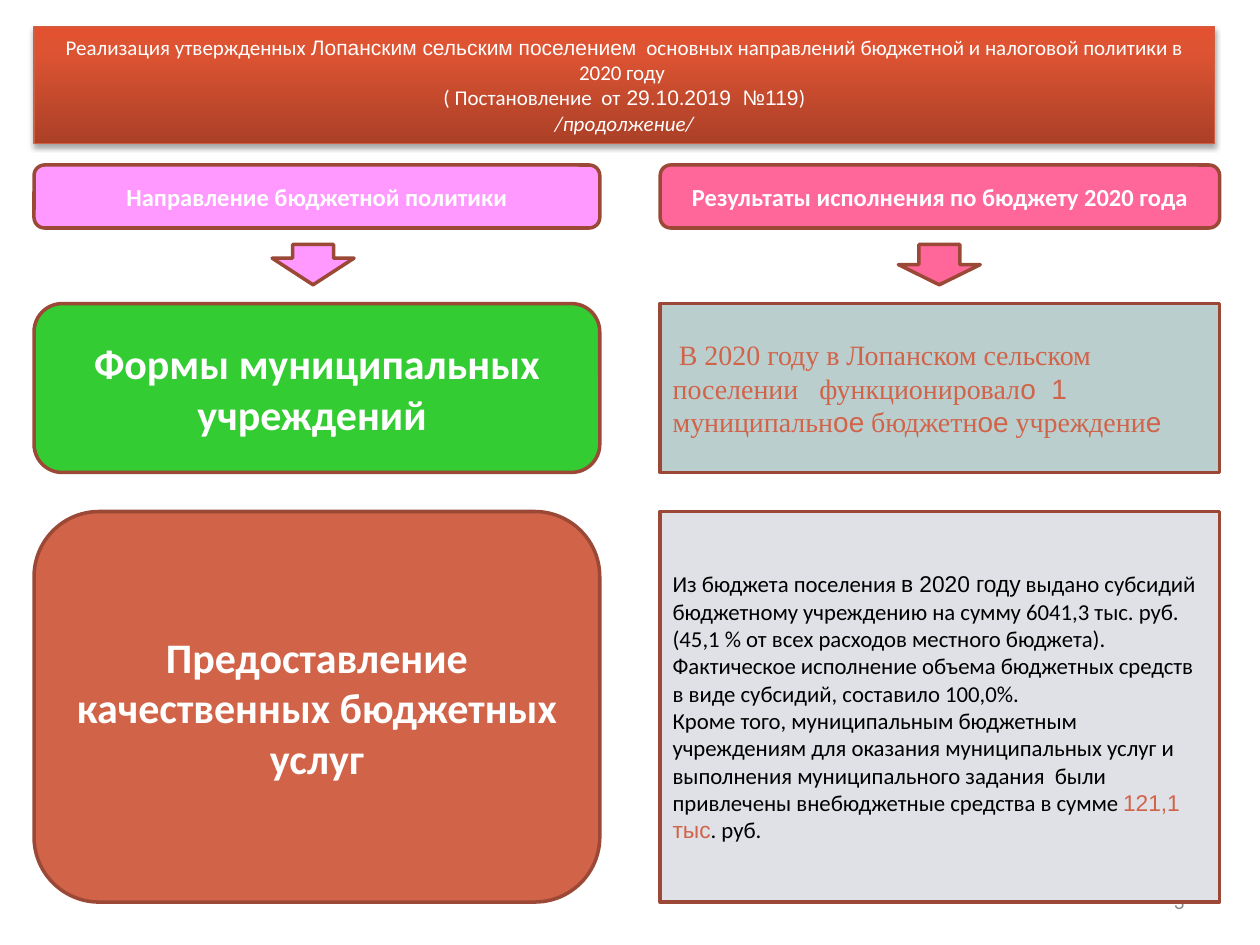
import copy
from dataclasses import dataclass

import lxml.etree
import pptx
import pptx.dml.color
import pptx.enum.shapes
import pptx.enum.text
import pptx.oxml.ns
import pptx.util

SHAPE = pptx.enum.shapes.MSO_SHAPE
ALIGN = pptx.enum.text.PP_ALIGN
MIDDLE = pptx.enum.text.MSO_ANCHOR.MIDDLE


@dataclass(frozen=True)
class Theme:
    body_font: str = "Calibri"
    sans: str = "Arial"
    serif: str = "Times New Roman"
    white: str = "FFFFFF"
    black: str = "000000"
    accent: str = "D16349"
    outline: str = "9B4936"
    banner_line: str = "D05F44"
    banner_stops: tuple = ((0, "AB4027"), (80, "DE5433"), (100, "E35230"))
    pink: str = "FF99FF"
    rose: str = "FF6699"
    green: str = "33CC33"
    teal: str = "BACECE"
    grey: str = "DFE1E7"
    number: str = "898989"
    small: int = 12
    details: int = 13
    heading: int = 14
    result: int = 16
    topic: int = 24


THEME = Theme()

# Grid in inches: (start, length)
LEFT_COLUMN, RIGHT_COLUMN = (0.27, 4.49), (5.24, 4.44)
HEADING_ROW, ARROW_ROW, FORMS_ROW, SERVICES_ROW = (
    (1.31, 0.5), (1.94, 0.32), (2.41, 1.34), (4.06, 3.1))
ARROW_OFFSET, ARROW_WIDTH = 1.89, 0.65


def cell(column, row):
    return column[0], row[0], column[1], row[1]


def rgb(value):
    return pptx.dml.color.RGBColor.from_string(value)


def inches(box):
    return [pptx.util.Inches(length) for length in box]


def write_text(shape, paragraphs, size, color, bold=None, align=ALIGN.LEFT):
    """Fill the shape; a paragraph is a list of (text, overrides) runs."""
    frame = shape.text_frame
    frame.word_wrap = True
    frame.vertical_anchor = MIDDLE
    for index, runs in enumerate(paragraphs):
        paragraph = frame.add_paragraph() if index else frame.paragraphs[0]
        paragraph.alignment = align
        paragraph.font.name = THEME.body_font
        paragraph.font.size = pptx.util.Pt(size)
        paragraph.font.bold = bold
        paragraph.font.color.rgb = rgb(color)
        for text, overrides in runs:
            run = paragraph.add_run()
            run.text = text
            if "font" in overrides:
                run.font.name = overrides["font"]
            if "color" in overrides:
                run.font.color.rgb = rgb(overrides["color"])
            if "italic" in overrides:
                run.font.italic = overrides["italic"]


def add_block(slide, kind, box, fill):
    shape = slide.shapes.add_shape(kind, *inches(box))
    shape.shadow.inherit = False
    shape.fill.solid()
    shape.fill.fore_color.rgb = rgb(fill)
    shape.line.color.rgb = rgb(THEME.outline)
    shape.line.width = pptx.util.Pt(2)
    return shape


def set_gradient(shape, stops):
    shape.fill.gradient()
    shape.fill.gradient_angle = 90
    stop_list = shape.fill.gradient_stops[0]._gs.getparent()
    stop_list.append(copy.deepcopy(stop_list[-1]))
    for stop, (position, color) in zip(shape.fill.gradient_stops, stops):
        stop.position = position / 100
        stop.color.rgb = rgb(color)


def add_shadow(shape):
    shape.shadow.inherit = False
    name = pptx.oxml.ns.qn
    effects = shape._element.spPr.find(name("a:effectLst"))
    shadow = lxml.etree.SubElement(
        effects, name("a:outerShdw"), blurRad=str(pptx.util.Pt(3.1)),
        dist=str(pptx.util.Pt(1.8)), dir="5400000", rotWithShape="0")
    color = lxml.etree.SubElement(shadow, name("a:srgbClr"), val=THEME.black)
    lxml.etree.SubElement(color, name("a:alpha"), val="35000")


def add_banner(slide, box):
    banner = slide.shapes.add_shape(SHAPE.RECTANGLE, *inches(box))
    set_gradient(banner, THEME.banner_stops)
    banner.line.color.rgb = rgb(THEME.banner_line)
    banner.line.width = pptx.util.Pt(0.75)
    add_shadow(banner)
    sans = {"font": THEME.sans}
    write_text(banner, [
        [("Реализация утвержденных ", {}),
         ("Лопанским сельским поселением", sans),
         ("  основных направлений бюджетной и налоговой политики в 2020 году ", {})],
        [("( Постановление  от", {}), (" 29.10", sans), (".", {}),
         ("2019  №119", sans), (")", {})],
        [("/продолжение/", {"italic": True})],
    ], THEME.small, THEME.white, align=ALIGN.CENTER)


def add_column_heading(slide, column, title, fill, arrow_head):
    heading = add_block(slide, SHAPE.ROUNDED_RECTANGLE,
                        cell(column, HEADING_ROW), fill)
    write_text(heading, [[(title, {})]], THEME.heading, THEME.white,
               bold=True, align=ALIGN.CENTER)
    arrow_column = (column[0] + ARROW_OFFSET, ARROW_WIDTH)
    arrow = add_block(slide, SHAPE.DOWN_ARROW, cell(arrow_column, ARROW_ROW), fill)
    arrow.adjustments[1] = arrow_head


def add_policy_row(slide, row, topic, topic_fill, result, result_fill, size, color):
    """Place a topic on the left and its result on the right."""
    left = add_block(slide, SHAPE.ROUNDED_RECTANGLE,
                     cell(LEFT_COLUMN, row), topic_fill)
    write_text(left, [[(topic, {})]], THEME.topic, THEME.white,
               bold=True, align=ALIGN.CENTER)
    right = add_block(slide, SHAPE.RECTANGLE, cell(RIGHT_COLUMN, row), result_fill)
    write_text(right, result, size, color)


def add_page_number(slide, box):
    number = slide.shapes.add_textbox(*inches(box))
    write_text(number, [[("3", {})]], THEME.small, THEME.number, align=ALIGN.RIGHT)


def main():
    presentation = pptx.Presentation()
    presentation.slide_width, presentation.slide_height = inches((10, 7.5))
    slide = presentation.slides.add_slide(presentation.slide_layouts[6])

    add_page_number(slide, (7.17, 6.95, 2.33, 0.4))
    add_banner(slide, (0.27, 0.21, 9.37, 0.93))
    add_column_heading(slide, LEFT_COLUMN, "Направление бюджетной политики",
                       THEME.pink, 0.66)
    add_column_heading(slide, RIGHT_COLUMN,
                       "Результаты исполнения по бюджету 2020 года",
                       THEME.rose, 0.5)

    sans, serif = {"font": THEME.sans}, {"font": THEME.serif}
    forms_result = [[
        (" ", {}),
        ("В 2020 году в Лопанском сельском поселении   функционировал", serif),
        ("о  1", sans), (" муниципальн", serif), ("ое", sans),
        (" бюджетн", serif), ("ое", sans), (" учреждени", serif), ("е", sans)]]
    add_policy_row(slide, FORMS_ROW, "Формы муниципальных учреждений ", THEME.green,
                   forms_result, THEME.teal, THEME.result, THEME.accent)

    services_result = [
        [("Из бюджета поселения ", {}), ("в 2020 году", sans),
         (" выдано субсидий бюджетному учреждению на сумму 6041,3 тыс. руб. "
          "(45,1 % от всех расходов местного бюджета). Фактическое исполнение "
          "объема бюджетных средств в виде субсидий, составило 100,0%.", {})],
        [("Кроме того, муниципальным бюджетным учреждениям для оказания "
          "муниципальных услуг и выполнения муниципального задания  были "
          "привлечены внебюджетные средства в сумме ", {}),
         ("121,1 тыс", {"font": THEME.sans, "color": THEME.accent}),
         (". руб.", {})]]
    add_policy_row(slide, SERVICES_ROW, "Предоставление качественных бюджетных услуг",
                   THEME.accent, services_result, THEME.grey,
                   THEME.details, THEME.black)

    presentation.save("out.pptx")


if __name__ == "__main__":
    main()
